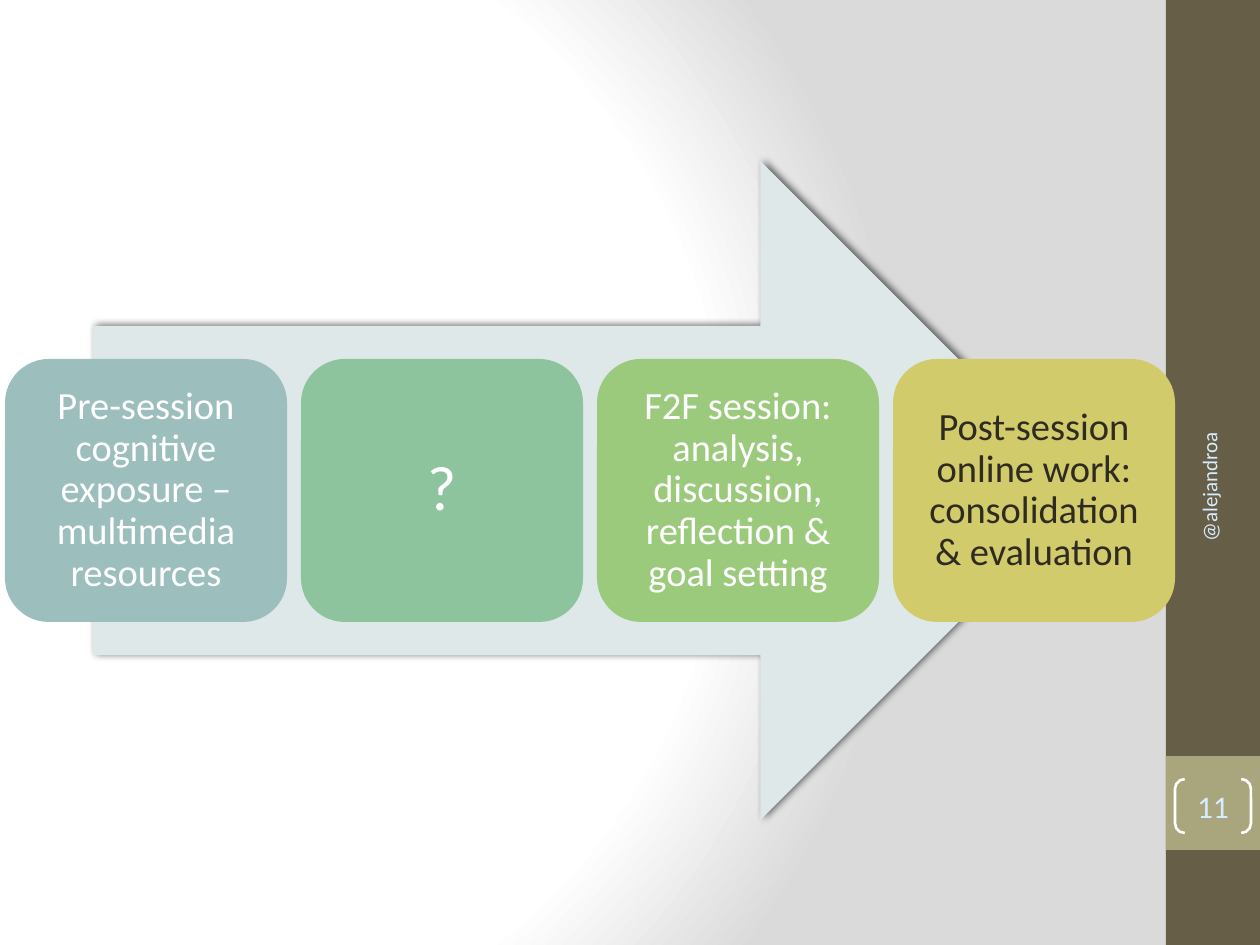
from dataclasses import dataclass

from lxml.etree import SubElement
from pptx import Presentation
from pptx.dml.color import RGBColor
from pptx.enum.shapes import MSO_SHAPE as Shape
from pptx.enum.text import MSO_ANCHOR as Anchor, PP_ALIGN as Align
from pptx.oxml import parse_xml
from pptx.oxml.ns import nsdecls, qn
from pptx.util import Emu, Pt

PX = 914400 / 126
FONT = "Calibri"
WHITE = RGBColor(0xFF, 0xFF, 0xFF)
DARK = RGBColor(0x2F, 0x2B, 0x20)
PALE_BLUE = RGBColor(0xD6, 0xEC, 0xFF)
BROWN = RGBColor(0x67, 0x5E, 0x47)
KHAKI = RGBColor(0xA9, 0xA5, 0x7C)
MIST = RGBColor(0xDE, 0xE8, 0xE8)
TEAL = RGBColor(0x9C, 0xBE, 0xBD)
SEA_GREEN = RGBColor(0x8D, 0xC4, 0x9D)
GREEN = RGBColor(0x9B, 0xCA, 0x7D)
YELLOW = RGBColor(0xD2, 0xCB, 0x6C)

CARD_LEFT, CARD_TOP, CARD_W, CARD_H, CARD_PITCH = 5, 359, 282, 263, 296
CARD_INSET = 11


@dataclass
class Box:
    x: int
    y: int
    w: int
    h: int

    def emu(self) -> list[Emu]:
        return [px(n) for n in (self.x, self.y, self.w, self.h)]


@dataclass
class Card:
    text: str
    fill: RGBColor
    color: RGBColor = WHITE
    size: int = 22


CARDS = [
    Card("Pre-session cognitive exposure – multimedia resources", TEAL),
    Card("?", SEA_GREEN, size=36),
    Card("F2F session: analysis, discussion, reflection & goal setting", GREEN),
    Card("Post-session online work: consolidation & evaluation", YELLOW, DARK),
]


def px(n: int) -> Emu:
    return Emu(round(n * PX))


def set_background(slide) -> None:
    fill = slide.background.fill
    fill.gradient()
    grad = slide.background._cSld.find(".//" + qn("a:gradFill"))
    stops = "".join(
        f'<a:gs pos="{pos}"><a:srgbClr val="{color}"/></a:gs>'
        for pos, color in ((0, "FFFFFF"), (75000, "FFFFFF"), (100000, "DADADA"))
    )
    grad.getparent().replace(grad, parse_xml(
        f'<a:gradFill {nsdecls("a")} rotWithShape="1"><a:gsLst>{stops}</a:gsLst>'
        '<a:path path="circle"><a:fillToRect l="20000" t="50000" r="100000" b="50000"/>'
        '</a:path></a:gradFill>'
    ))


def add_block(slide, kind: Shape, box: Box, color: RGBColor | None = None):
    sp = slide.shapes.add_shape(kind, *box.emu())
    sp.shadow.inherit = False
    sp.line.fill.background()
    if color is None:
        sp.fill.background()
    else:
        sp.fill.solid()
        sp.fill.fore_color.rgb = color
    return sp


def add_shadow(sp) -> None:
    effects = sp._element.spPr.find(qn("a:effectLst"))
    shadow = SubElement(effects, qn("a:outerShdw"), blurRad=str(Pt(4)),
                        dist=str(Pt(2)), dir="0", rotWithShape="0")
    color = SubElement(shadow, qn("a:srgbClr"), val="000000")
    SubElement(color, qn("a:alpha"), val="60000")


def set_text(sp, text: str, size: int, color: RGBColor,
             align: Align = Align.CENTER, inset: int = 0):
    tf = sp.text_frame
    tf.word_wrap = True
    tf.vertical_anchor = Anchor.MIDDLE
    tf.margin_left = tf.margin_right = tf.margin_top = tf.margin_bottom = px(inset)
    p = tf.paragraphs[0]
    p.text = text
    p.alignment = align
    p.font.name = FONT
    p.font.size = Pt(size)
    p.font.color.rgb = color
    return p


def add_card(slide, index: int, card: Card) -> None:
    box = Box(CARD_LEFT + index * CARD_PITCH, CARD_TOP, CARD_W, CARD_H)
    sp = add_block(slide, Shape.ROUNDED_RECTANGLE, box, card.fill)
    p = set_text(sp, card.text, card.size, card.color, inset=CARD_INSET)
    p.line_spacing = 0.9


def add_page_number(slide) -> None:
    sp = add_block(slide, Shape.DOUBLE_BRACKET, Box(1175, 779, 76, 54))
    sp.adjustments[0] = 0.18
    sp.line.color.rgb = WHITE
    sp.line.width = Pt(1.5)
    set_text(sp, "11", 18, PALE_BLUE)


def add_handle(slide) -> None:
    sp = slide.shapes.add_textbox(*Box(1046, 558, 326, 50).emu())
    sp.rotation = 270
    set_text(sp, "@alejandroa", 12, PALE_BLUE, Align.RIGHT, inset=12)


def main() -> None:
    prs = Presentation()
    prs.slide_width, prs.slide_height = px(1260), px(945)
    slide = prs.slides.add_slide(prs.slide_layouts[6])
    set_background(slide)
    add_block(slide, Shape.RECTANGLE, Box(1166, 0, 94, 945), BROWN)
    add_block(slide, Shape.RECTANGLE, Box(1166, 756, 94, 94), KHAKI)
    add_shadow(add_block(slide, Shape.RIGHT_ARROW, Box(93, 161, 997, 659), MIST))
    for index, card in enumerate(CARDS):
        add_card(slide, index, card)
    add_page_number(slide)
    add_handle(slide)
    prs.save("out.pptx")


if __name__ == "__main__":
    main()
